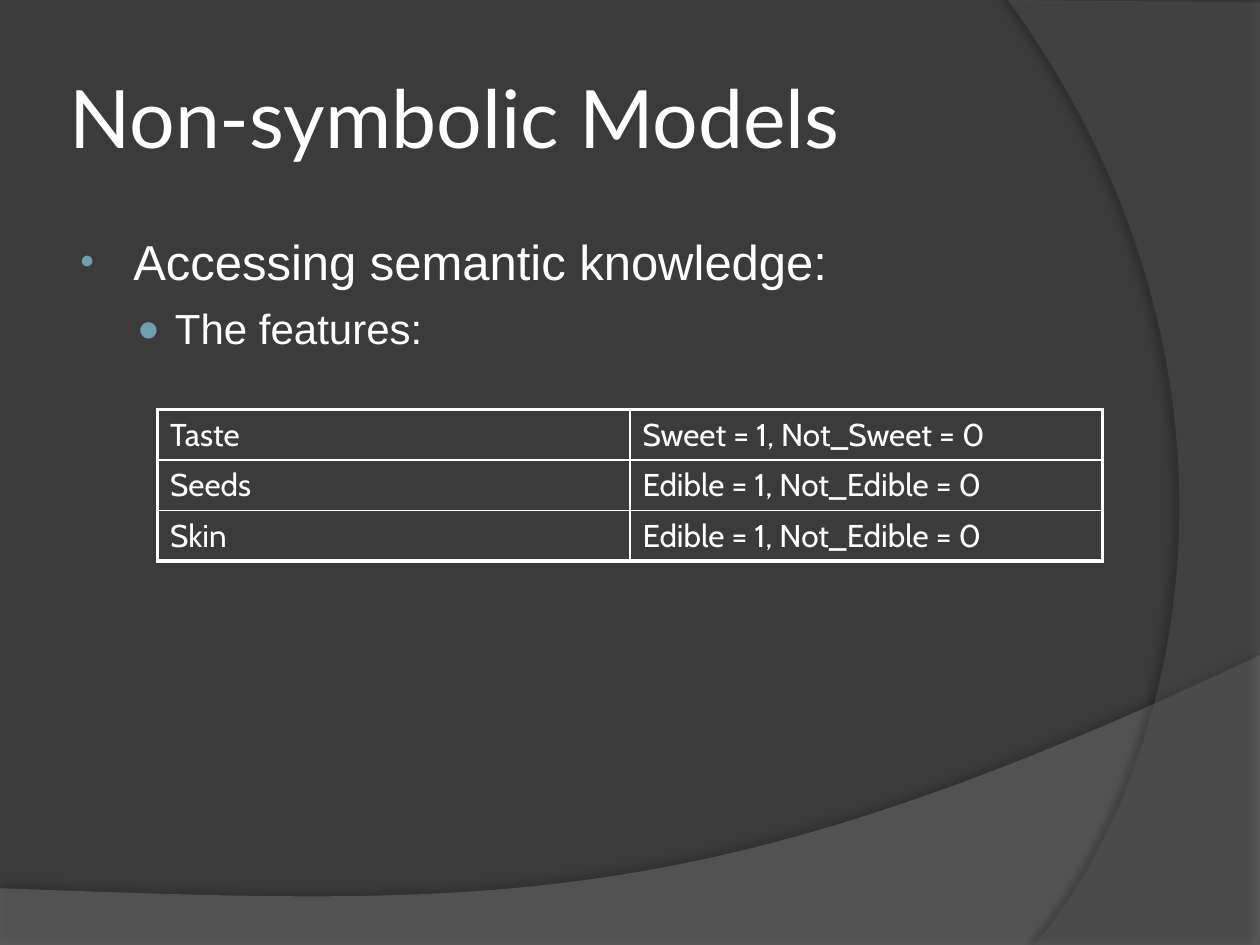
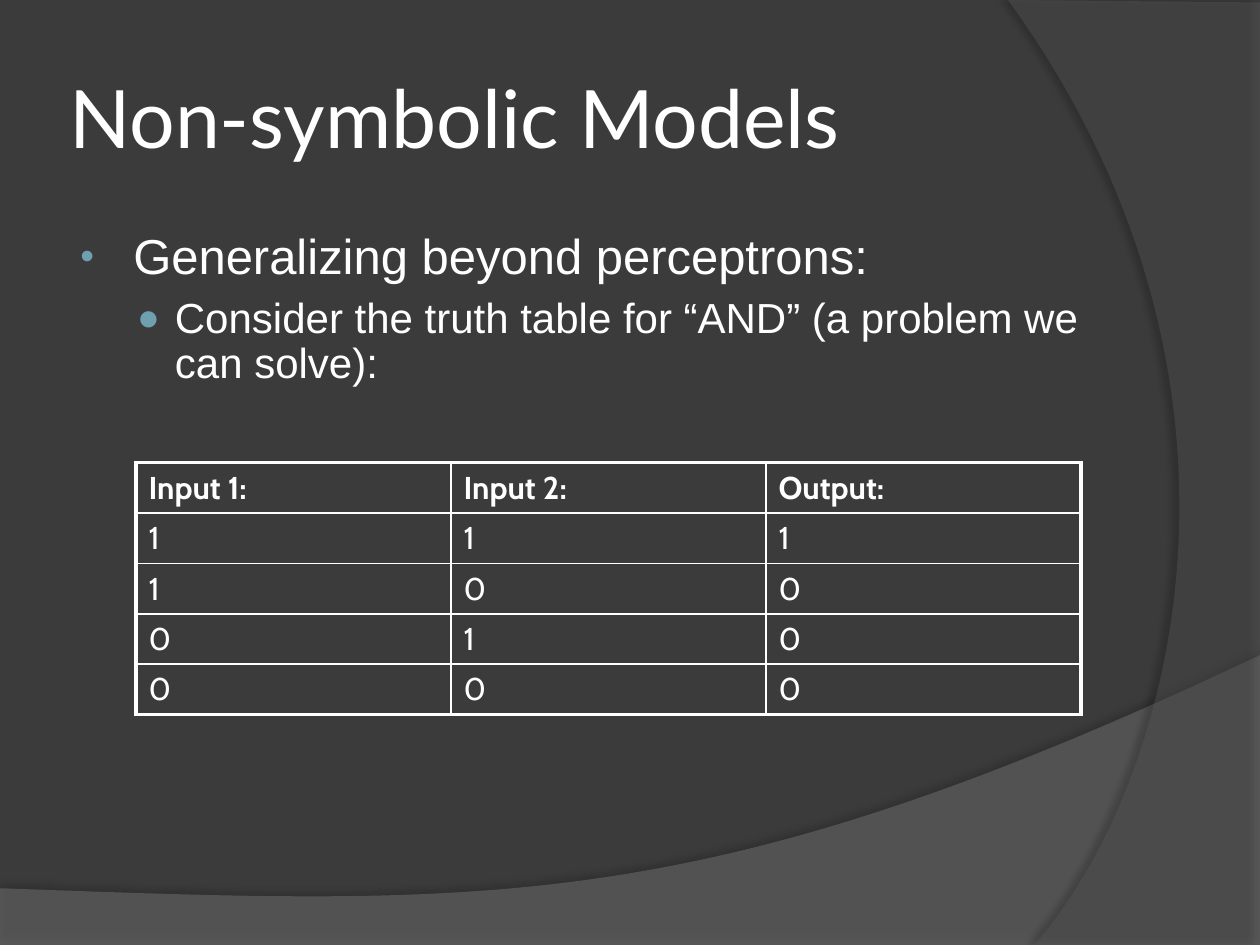
import dataclasses
import typing

import lxml.etree
import pptx
import pptx.dml.color
import pptx.enum.shapes
import pptx.enum.text
import pptx.oxml.ns
import pptx.util

Inches = pptx.util.Inches
Pt = pptx.util.Pt
RGBColor = pptx.dml.color.RGBColor
qn = pptx.oxml.ns.qn

DARK = RGBColor(0x3B, 0x3B, 0x3B)
WAVE = RGBColor(0x7C, 0x7C, 0x7C)
ARC = RGBColor(0x59, 0x59, 0x59)
WHITE = RGBColor(0xFF, 0xFF, 0xFF)
BLUE = RGBColor(0x6E, 0xA0, 0xB0)
BLACK = RGBColor(0, 0, 0)

TITLE = "Non-symbolic Models"
ROW_HIGH = 0.4
THICK, THIN = 2.25, 1
STEPS = 60

Point = tuple[float, float]


@dataclasses.dataclass
class Band:
    """A filled outline: straight corners, then a Bezier curve from the last one."""
    color: RGBColor
    alpha: int
    corners: list[Point]
    curve: list[Point]
    shade: int
    blur: float
    gap: float
    angle: int


@dataclasses.dataclass
class Level:
    mark: str
    scale: int
    left: float
    hang: float
    size: int
    before: float


@dataclasses.dataclass
class Grid:
    left: float
    top: float
    col_wide: float
    rows: list[list[str]]
    header: bool


@dataclasses.dataclass
class Page:
    points: list[str]
    spacing: float
    grid: Grid


BANDS = [
    Band(WAVE, 45, [(0, 7.05), (0, 7.5), (10, 7.5), (10, 5.2)],
         [(5.59, 7.29), (3.91, 7.19), (0, 7.05)], 35, 4, 3.5, 270),
    Band(ARC, 40, [(10, 0.02), (10, 7.5), (8.21, 7.5)],
         [(9.35, 6.19), (10.18, 3), (8, 0)], 45, 4, 4, 180),
]

LEVELS = [Level("•", 80, 0.46, -0.42, 28, 0), Level("●", 90, 0.79, -0.3, 24, 7)]

PAGES = [
    Page(["Accessing semantic knowledge:", "The features:"], 1.0,
         Grid(1.25, 3.25, 3.75,
              [["Taste", "Sweet = 1, Not_Sweet = 0"],
               ["Seeds", "Edible = 1, Not_Edible = 0"],
               ["Skin", "Edible = 1, Not_Edible = 0"]], False)),
    Page(["Generalizing beyond perceptrons:",
          "Consider the truth table for “AND” (a problem we can solve):"], 0.9,
         Grid(1.08, 3.67, 2.5,
              [["Input 1:", "Input 2:", "Output:"],
               ["1", "1", "1"], ["1", "0", "0"],
               ["0", "1", "0"], ["0", "0", "0"]], True)),
]


def style(item: typing.Any, **values: typing.Any) -> None:
    for name, value in values.items():
        setattr(item, name, value)


def add_node(parent: typing.Any, tag: str, **values: typing.Any) -> typing.Any:
    node = lxml.etree.SubElement(parent, qn(tag))
    for name, value in values.items():
        node.set(name, str(value))
    return node


def add_color(parent: typing.Any, color: RGBColor) -> typing.Any:
    return add_node(parent, "a:srgbClr", val=color)


def trace(start: Point, curve: list[Point]) -> list[Point]:
    """Sample a cubic Bezier curve, leaving out its start."""
    knots = [start, *curve]
    path = []
    for step in range(1, STEPS + 1):
        t = step / STEPS
        parts = ((1 - t) ** 3, 3 * t * (1 - t) ** 2, 3 * t * t * (1 - t), t ** 3)
        path.append((sum(p * k[0] for p, k in zip(parts, knots)),
                     sum(p * k[1] for p, k in zip(parts, knots))))
    return path


def draw_band(slide: typing.Any, band: Band) -> None:
    outline = [(Inches(x), Inches(y))
               for x, y in band.corners + trace(band.corners[-1], band.curve)]
    pen = slide.shapes.build_freeform(*outline[0], scale=1.0)
    pen.add_line_segments(outline[1:], close=True)
    shape = pen.convert_to_shape()
    shape.fill.solid()
    shape.fill.fore_color.rgb = band.color
    shape.line.fill.background()
    shape.shadow.inherit = False
    props = shape.element.spPr
    tint = props.find(qn("a:solidFill")).find(qn("a:srgbClr"))
    add_node(tint, "a:alpha", val=band.alpha * 1000)
    shadow = add_node(props.find(qn("a:effectLst")), "a:outerShdw",
                      blurRad=int(Pt(band.blur)), dist=int(Pt(band.gap)),
                      dir=band.angle * 60000, algn="ctr", rotWithShape=0)
    add_node(add_color(shadow, BLACK), "a:alpha", val=band.shade * 1000)


def write(para: typing.Any, text: str, size: int, face: str, bold: bool = False) -> None:
    run = para.add_run()
    run.text = text
    style(run.font, size=Pt(size), name=face, bold=bold)
    run.font.color.rgb = WHITE


def add_box(slide: typing.Any, top: float, high: float, **frame: typing.Any) -> typing.Any:
    box = slide.shapes.add_textbox(Inches(0.5), Inches(top), Inches(8.17), Inches(high))
    style(box.text_frame, word_wrap=True, **frame)
    return box.text_frame


def add_title(slide: typing.Any) -> None:
    pad = Inches(0.05)
    frame = add_box(slide, 0.3, 1.25, margin_left=pad, margin_right=pad,
                    margin_top=pad, margin_bottom=pad,
                    vertical_anchor=pptx.enum.text.MSO_ANCHOR.MIDDLE)
    write(frame.paragraphs[0], TITLE, 46, "Lato")


def add_points(slide: typing.Any, page: Page) -> None:
    frame = add_box(slide, 1.75, 4.95, margin_top=Inches(0.09))
    for depth, (text, level) in enumerate(zip(page.points, LEVELS)):
        para = frame.add_paragraph() if depth else frame.paragraphs[0]
        style(para, level=depth, line_spacing=page.spacing, space_before=Pt(level.before))
        write(para, text, level.size, "Arial")
        props = para._p.get_or_add_pPr()
        props.set("marL", str(int(Inches(level.left))))
        props.set("indent", str(int(Inches(level.hang))))
        add_color(add_node(props, "a:buClr"), BLUE)
        add_node(props, "a:buSzPct", val=level.scale * 1000)
        add_node(props, "a:buFont", typeface="Arial")
        add_node(props, "a:buChar", char=level.mark)


def add_edge(cell: typing.Any, side: str, outer: bool) -> None:
    width = THICK if outer else THIN
    edge = add_node(cell._tc.get_or_add_tcPr(), f"a:ln{side}", w=int(Pt(width)))
    add_color(add_node(edge, "a:solidFill"), WHITE)


def add_grid(slide: typing.Any, grid: Grid) -> None:
    high, wide = len(grid.rows), len(grid.rows[0])
    table = slide.shapes.add_table(
        high, wide, Inches(grid.left), Inches(grid.top),
        Inches(grid.col_wide * wide), Inches(ROW_HIGH * high)).table
    style(table, first_row=False, horz_banding=False)
    for r, texts in enumerate(grid.rows):
        for c, text in enumerate(texts):
            cell = table.cell(r, c)
            write(cell.text_frame.paragraphs[0], text, 18, "Cabin", grid.header and r == 0)
            sides = {"L": c == 0, "R": c == wide - 1, "T": r == 0, "B": r == high - 1}
            for side, outer in sides.items():
                add_edge(cell, side, outer)
            cell.fill.background()


def main() -> None:
    deck = pptx.Presentation()
    style(deck, slide_width=Inches(10), slide_height=Inches(7.5))
    for page in PAGES:
        slide = deck.slides.add_slide(deck.slide_layouts[6])
        slide.background.fill.solid()
        slide.background.fill.fore_color.rgb = DARK
        for band in BANDS:
            draw_band(slide, band)
        add_title(slide)
        add_points(slide, page)
        add_grid(slide, page.grid)
    deck.save("out.pptx")


if __name__ == "__main__":
    main()
